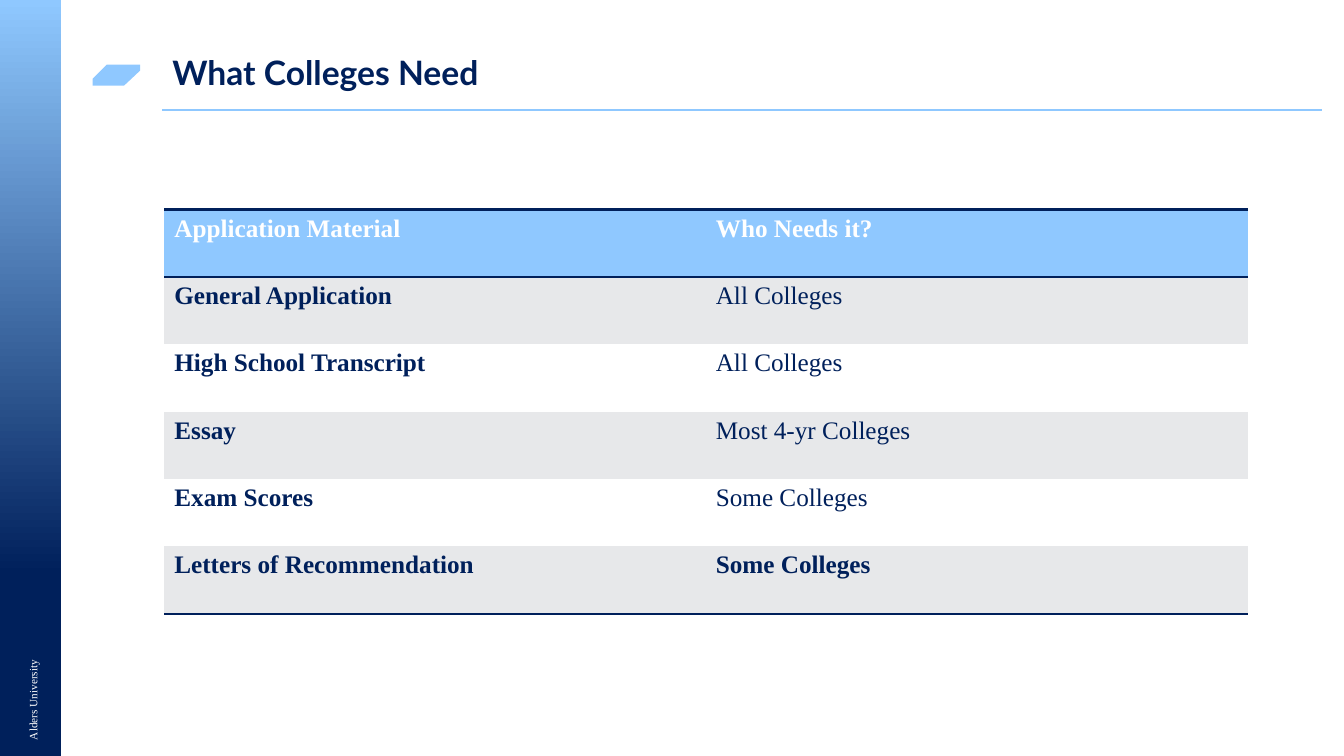
from lxml import etree
from pptx import Presentation, util as u
from pptx.dml.color import RGBColor
from pptx.enum import shapes, text
from pptx.oxml import ns

HUES = {"navy": "00205B", "sky": "8FC8FF", "gray": "E7E8EA", "white": "FFFFFF"}
SERIF = "Times New Roman"


def add_run(para, words, size, hue, font=SERIF, bold=False):
    run = para.add_run()
    run.text = words
    run.font.size = u.Pt(size)
    run.font.name = font
    run.font.bold = bold
    run.font.color.rgb = RGBColor.from_string(HUES[hue])


def add_edge(cell, side):
    props = cell._tc.get_or_add_tcPr()
    edge = etree.Element(ns.qn("a:" + side), w=str(u.Pt(2)))
    fill = etree.SubElement(edge, ns.qn("a:solidFill"))
    etree.SubElement(fill, ns.qn("a:srgbClr"), val=HUES["navy"])
    props.insert(0, edge)


deck = Presentation()
deck.slide_width, deck.slide_height = u.Inches(13.33), u.Inches(7.5)
slide = deck.slides.add_slide(deck.slide_layouts[5])
parts = slide.shapes

# Gradient side band
band = parts.add_shape(shapes.MSO_SHAPE.RECTANGLE, 0, 0, u.Inches(0.61), deck.slide_height)
band.shadow.inherit = False
band.line.fill.background()
band.fill.gradient()
band.fill.gradient_angle = 270
for stop, (hue, place) in zip(band.fill.gradient_stops, [("sky", 0), ("navy", 0.76)]):
    stop.color.rgb = RGBColor.from_string(HUES[hue])
    stop.position = place

# School name, reading upward
label = parts.add_textbox(u.Inches(-0.47), u.Inches(6.52), u.Inches(1.6), u.Inches(0.24))
label.rotation = 270
label.text_frame.word_wrap = True
add_run(label.text_frame.paragraphs[0], "Alders University", 8, "white")

# Title rule
rule = parts.add_connector(shapes.MSO_CONNECTOR.STRAIGHT, u.Inches(1.61), u.Inches(1.09),
                           u.Inches(13.11), u.Inches(1.09))
rule.line.color.rgb = RGBColor.from_string(HUES["sky"])
rule.line.width = u.Pt(1)
etree.SubElement(rule._element.spPr, ns.qn("a:effectLst"))

# Slanted marker
pen = parts.build_freeform(139, 64, scale=u.Inches(0.01))
pen.add_line_segments([(139, 70), (123, 85), (92, 85), (92, 78), (106, 64)], close=True)
mark = pen.convert_to_shape()
mark.shadow.inherit = False
mark.fill.solid()
mark.fill.fore_color.rgb = RGBColor.from_string(HUES["sky"])
mark.line.fill.background()

# Title
title = parts.title
title.left, title.top = u.Inches(1.61), u.Inches(0.4)
title.width, title.height = u.Inches(11.5), u.Inches(0.69)
title.text_frame.vertical_anchor = text.MSO_ANCHOR.MIDDLE
head = title.text_frame.paragraphs[0]
head.alignment = text.PP_ALIGN.LEFT
head.line_spacing = 0.9
add_run(head, "What Colleges Need", 24, "navy", "Lato", True)

# Table of materials
ROWS = [
    ("Application Material", "Who Needs it?"),
    ("General Application", "All Colleges"),
    ("High School Transcript", "All Colleges"),
    ("Essay", "Most 4-yr Colleges"),
    ("Exam Scores", "Some Colleges"),
    ("Letters of Recommendation", "Some Colleges"),
]
last = len(ROWS) - 1
frame = parts.add_table(len(ROWS), 2, u.Inches(1.63), u.Inches(2.08),
                        u.Inches(10.75), u.Inches(4.01))
table = frame.table
table.horz_banding = False
table.columns[0].width, table.columns[1].width = u.Inches(5.37), u.Inches(5.38)
style = frame._element.find(".//" + ns.qn("a:tableStyleId"))
style.text = "{2D5ABB26-0587-4C30-8999-92F81FD0307C}"
for r, row in enumerate(ROWS):
    hue = "sky" if r == 0 else "gray" if r % 2 else "white"
    for c, words in enumerate(row):
        cell = table.cell(r, c)
        cell.fill.solid()
        cell.fill.fore_color.rgb = RGBColor.from_string(HUES[hue])
        bold = c == 0 or r in (0, last)
        add_run(cell.text_frame.paragraphs[0], words, 18,
                "navy" if r else "white", bold=bold)
        if r in (0, last):
            add_edge(cell, "lnB")
        if r == 0:
            add_edge(cell, "lnT")

deck.save("out.pptx")
